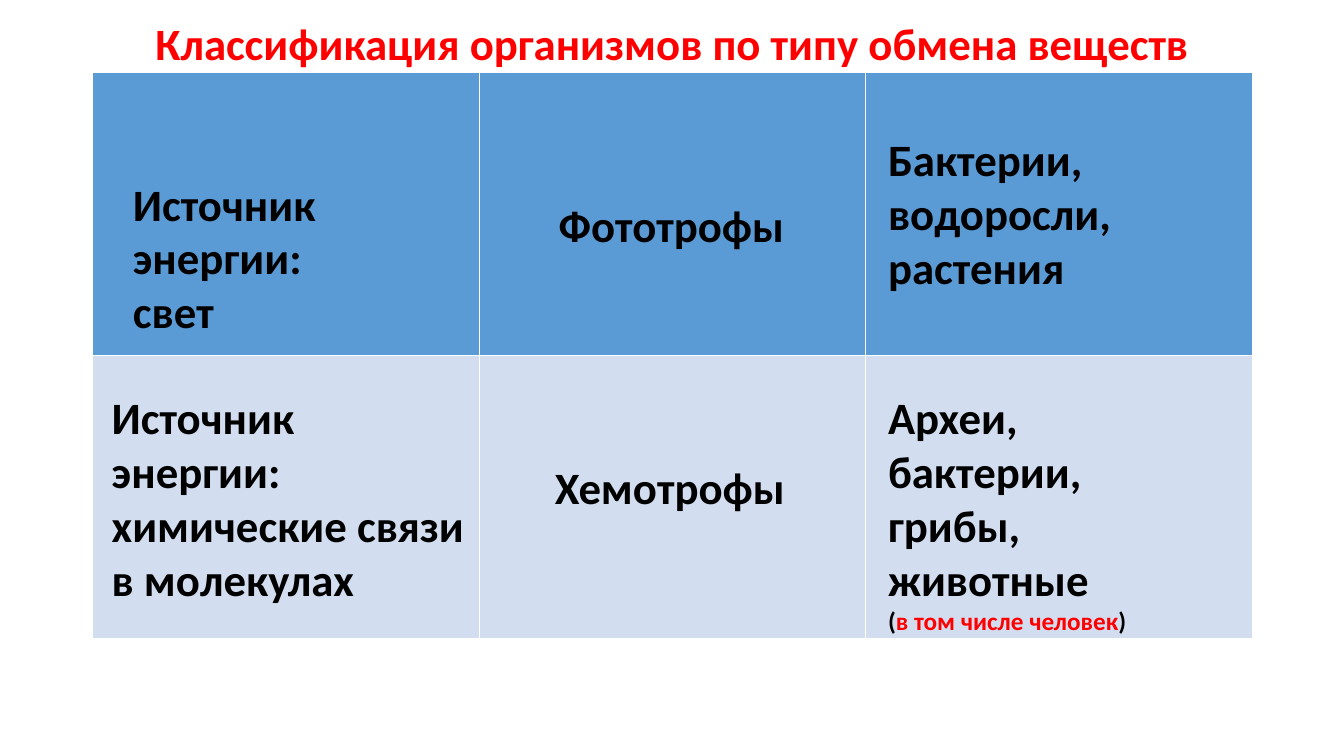
from typing import NamedTuple

from pptx import Presentation
from pptx.dml.color import RGBColor
from pptx.enum.text import MSO_ANCHOR, MSO_AUTO_SIZE, PP_ALIGN
from pptx.util import Inches, Pt

LEFT, CENTER = PP_ALIGN.LEFT, PP_ALIGN.CENTER
MIDDLE = MSO_ANCHOR.MIDDLE
NO_FIT, GROW = MSO_AUTO_SIZE.NONE, MSO_AUTO_SIZE.SHAPE_TO_FIT_TEXT

RED = RGBColor(0xFF, 0x00, 0x00)
BLACK = RGBColor(0x00, 0x00, 0x00)
ROW_FILLS = (RGBColor(0x5B, 0x9B, 0xD5), RGBColor(0xD2, 0xDE, 0xEF))

FONT = "Calibri"
TITLE_ONLY = 5
COLUMNS = 3
TABLE_BOX = (0.92, 0.72, 11.5, 5.62)


class Label(NamedTuple):
    lines: tuple[str, ...]
    left: float
    top: float
    width: float
    height: float
    align: PP_ALIGN = LEFT


LABELS = (
    Label(("Источник энергии:", "свет"), 1.22, 1.7, 3.23, 1.72),
    Label(("Источник энергии: химические связи в молекулах",), 1.01, 3.82, 3.73, 2.26),
    Label(("Фототрофы",), 5.05, 1.91, 3.22, 0.64, CENTER),
    Label(("Хемотрофы",), 5.02, 4.51, 3.25, 0.64, CENTER),
    Label(("Бактерии, водоросли, растения",), 8.71, 1.26, 3.44, 1.72),
)
CHEMOTROPH_EXAMPLES = Label(("Археи, бактерии, грибы, животные",), 8.71, 3.82, 3.44, 2.56)
HUMAN_NOTE = (("(", BLACK), ("в том числе человек", RED), (")", BLACK))


def add_text(paragraph, text: str, *, size: float = 32, color: RGBColor = BLACK) -> None:
    run = paragraph.add_run()
    run.text = text
    run.font.name = FONT
    run.font.size = Pt(size)
    run.font.bold = True
    run.font.color.rgb = color


def set_title(slide, text: str) -> None:
    title = slide.shapes.title
    title.left, title.top = Inches(0.92), Inches(0)
    title.width, title.height = Inches(11.5), Inches(0.91)
    frame = title.text_frame
    frame.auto_size = NO_FIT
    frame.word_wrap = True
    frame.vertical_anchor = MIDDLE
    paragraph = frame.paragraphs[0]
    paragraph.alignment = CENTER
    paragraph.line_spacing = 0.9
    add_text(paragraph, text, color=RED)


def add_background_table(slide) -> None:
    box = [Inches(value) for value in TABLE_BOX]
    table = slide.shapes.add_table(len(ROW_FILLS), COLUMNS, *box).table
    for row, color in zip(table.rows, ROW_FILLS):
        for cell in row.cells:
            cell.fill.solid()
            cell.fill.fore_color.rgb = color


def add_label(slide, label: Label):
    """Draw a label over the table and return its text frame."""
    box = slide.shapes.add_textbox(
        Inches(label.left), Inches(label.top), Inches(label.width), Inches(label.height)
    )
    frame = box.text_frame
    frame.word_wrap = True
    frame.auto_size = GROW
    for index, line in enumerate(label.lines):
        paragraph = frame.add_paragraph() if index else frame.paragraphs[0]
        paragraph.alignment = label.align
        add_text(paragraph, line)
    return frame


def main() -> None:
    presentation = Presentation()
    presentation.slide_width = Inches(13.33)
    presentation.slide_height = Inches(7.5)
    slide = presentation.slides.add_slide(presentation.slide_layouts[TITLE_ONLY])

    set_title(slide, "Классификация организмов по типу обмена веществ")
    add_background_table(slide)
    for label in LABELS:
        add_label(slide, label)

    note = add_label(slide, CHEMOTROPH_EXAMPLES).add_paragraph()
    for text, color in HUMAN_NOTE:
        add_text(note, text, size=18, color=color)

    presentation.save("out.pptx")


if __name__ == "__main__":
    main()
